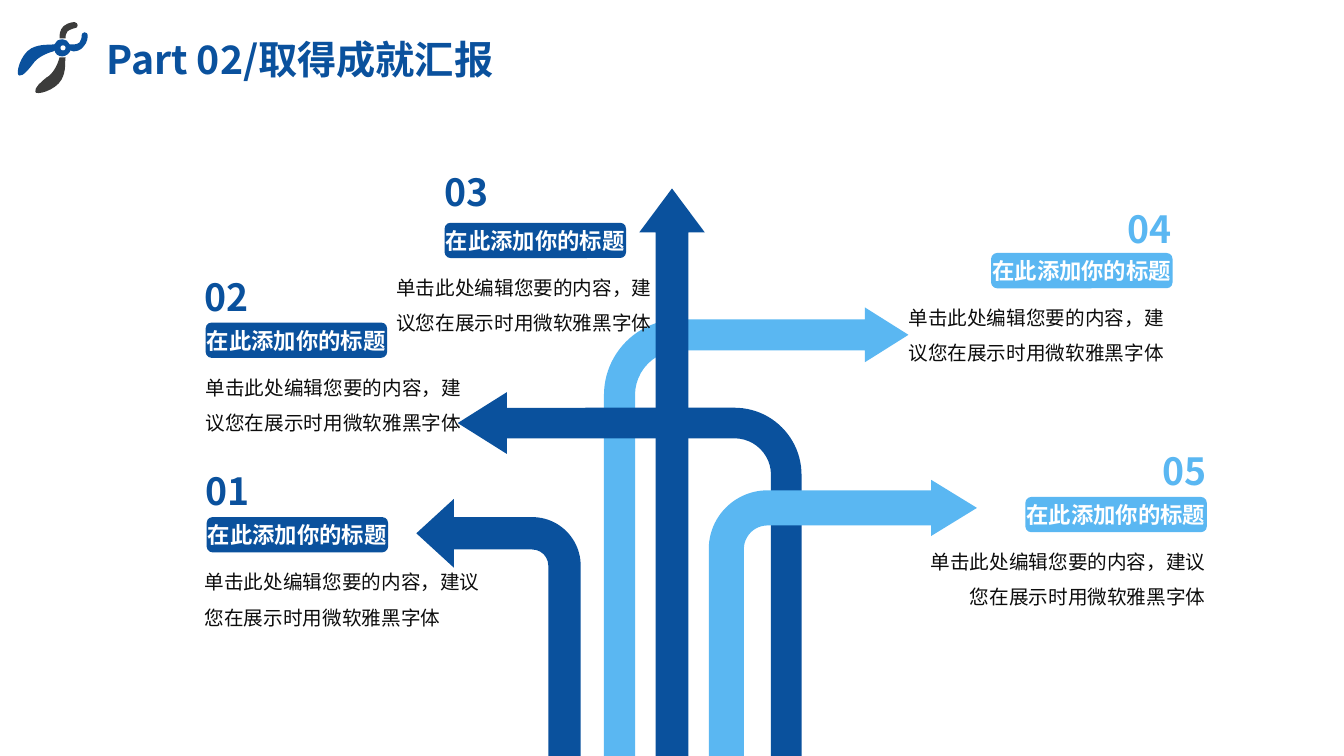
import pptx
import pptx.util
import pptx.dml.color
import pptx.enum.shapes
import pptx.enum.text
import pptx.oxml.ns
import lxml.etree

Inches = pptx.util.Inches
Shape = pptx.enum.shapes.MSO_SHAPE
Align = pptx.enum.text.PP_ALIGN
Anchor = pptx.enum.text.MSO_ANCHOR
qn = pptx.oxml.ns.qn

FONT = "Noto Sans CJK SC"
NAVY, SKY, WHITE, INK, GRAPHITE = "0A519D", "5AB7F2", "FFFFFF", "0D0D0D", "3C3C3B"

TITLE = "Part 02/取得成就汇报"
HEADING = "在此添加你的标题"
BODY = "单击此处编辑您要的内容，建议您在展示时用微软雅黑字体"

# Arrows, back to front: shape, left, top, width, adjustments, flipped, colour
ARROWS = [
    (Shape.BENT_ARROW, 5.99, 3.05, 3.02, (0.102, 0.09, 0.143, 0.249), False, SKY),
    (Shape.BENT_ARROW, 4.54, 3.89, 3.41, (0.089, 0.09, 0.143, 0.195), True, NAVY),
    (Shape.BENT_ARROW, 4.13, 4.95, 1.63, (0.197, 0.209, 0.228, 0.295), True, NAVY),
    (Shape.BENT_ARROW, 7.03, 4.76, 2.66, (0.131, 0.105, 0.171, 0.219), False, SKY),
    (Shape.UP_ARROW, 6.34, 1.87, 0.65, (0.5, 0.671), False, NAVY),
]

# Entries: number, number (left, top), bar (left, top), body (left, width), alignment, colour
ENTRIES = [
    ("01", (2.03, 4.64), (2.05, 5.13), (2.03, 2.89), Align.LEFT, NAVY),
    ("02", (2.02, 2.71), (2.04, 3.20), (2.04, 2.71), Align.LEFT, NAVY),
    ("05", (11.52, 4.44), (10.17, 4.93), (9.23, 2.73), Align.RIGHT, SKY),
    ("04", (11.17, 2.04), (9.83, 2.51), (9.01, 2.61), Align.LEFT, SKY),
    ("03", (4.40, 1.67), (4.41, 2.21), (3.93, 2.61), Align.LEFT, NAVY),
]
BAR_WIDTH, BAR_HEIGHT, BODY_DROP = 1.8, 0.35, 0.41

# Pliers icon: colour, start point, then cubic curves (two controls and an end)
BLUE_HANDLE = (NAVY, (0.84, 0.32), [
    (0.82, 0.32, 0.81, 0.34, 0.81, 0.35), (0.81, 0.36, 0.81, 0.40, 0.79, 0.42),
    (0.76, 0.45, 0.71, 0.44, 0.69, 0.44), (0.68, 0.41, 0.65, 0.39, 0.62, 0.39),
    (0.58, 0.39, 0.55, 0.41, 0.54, 0.44), (0.54, 0.44, 0.54, 0.44, 0.54, 0.44),
    (0.50, 0.45, 0.41, 0.43, 0.31, 0.48), (0.20, 0.54, 0.15, 0.74, 0.19, 0.75),
    (0.23, 0.76, 0.29, 0.68, 0.33, 0.63), (0.36, 0.58, 0.45, 0.53, 0.53, 0.51),
    (0.53, 0.51, 0.54, 0.51, 0.54, 0.50), (0.55, 0.54, 0.58, 0.56, 0.62, 0.56),
    (0.65, 0.56, 0.69, 0.53, 0.70, 0.50), (0.70, 0.50, 0.72, 0.51, 0.73, 0.51),
    (0.76, 0.51, 0.80, 0.50, 0.83, 0.46), (0.87, 0.42, 0.87, 0.36, 0.87, 0.35),
    (0.87, 0.34, 0.86, 0.32, 0.84, 0.32)])
GREY_TIP = (GRAPHITE, (0.62, 0.38), [
    (0.63, 0.38, 0.64, 0.38, 0.65, 0.38), (0.65, 0.36, 0.65, 0.33, 0.67, 0.31),
    (0.70, 0.29, 0.74, 0.28, 0.74, 0.28), (0.74, 0.28, 0.74, 0.28, 0.74, 0.28),
    (0.76, 0.28, 0.77, 0.27, 0.77, 0.25), (0.77, 0.24, 0.76, 0.22, 0.74, 0.22),
    (0.74, 0.22, 0.74, 0.22, 0.74, 0.22), (0.73, 0.22, 0.68, 0.22, 0.63, 0.26),
    (0.59, 0.30, 0.59, 0.35, 0.59, 0.38), (0.60, 0.38, 0.61, 0.38, 0.62, 0.38)])
GREY_HANDLE = (GRAPHITE, (0.65, 0.57), [
    (0.64, 0.57, 0.63, 0.57, 0.62, 0.57), (0.61, 0.57, 0.60, 0.57, 0.59, 0.57),
    (0.59, 0.57, 0.59, 0.57, 0.59, 0.57), (0.57, 0.65, 0.52, 0.74, 0.46, 0.77),
    (0.41, 0.81, 0.34, 0.87, 0.35, 0.91), (0.35, 0.95, 0.55, 0.90, 0.61, 0.79),
    (0.66, 0.70, 0.64, 0.61, 0.65, 0.57)])
RIVET = (0.6, 0.45, 0.05, 0.05)


def color(value):
    return pptx.dml.color.RGBColor.from_string(value)


def paint(shape, fill):
    shape.shadow.inherit = False
    shape.fill.solid()
    shape.fill.fore_color.rgb = color(fill)
    shape.line.fill.background()


def add_shape(parent, kind, left, top, width, height, fill):
    shape = parent.shapes.add_shape(kind, *map(Inches, (left, top, width, height)))
    paint(shape, fill)
    return shape


def write(box, text, size, ink, align, anchor, bold=True, wrap=False, inset=0, spacing=None):
    frame = box.text_frame
    frame.text = text
    frame.word_wrap = wrap
    frame.auto_size = pptx.enum.text.MSO_AUTO_SIZE.NONE
    frame.vertical_anchor = anchor
    if inset is not None:
        frame.margin_left = frame.margin_right = Inches(inset)
        frame.margin_top = frame.margin_bottom = Inches(inset)
    para = frame.paragraphs[0]
    para.alignment = align
    para.line_spacing = spacing
    span = para.runs[0]
    span.font.name = FONT
    span.font.size = pptx.util.Pt(size)
    span.font.bold = bold
    span.font.color.rgb = color(ink)
    east_asian = lxml.etree.SubElement(span.font._element, qn("a:ea"))
    east_asian.set("typeface", FONT)


def add_text(page, left, top, width, height, *args, **options):
    box = page.shapes.add_textbox(*map(Inches, (left, top, width, height)))
    write(box, *args, **options)


def add_curved(parent, fill, start, curves):
    points = [tuple(map(Inches, curve[i:i + 2])) for curve in curves for i in (0, 2, 4)]
    outline = parent.shapes.build_freeform(*map(Inches, start))
    outline.add_line_segments(points, close=True)
    shape = outline.convert_to_shape()
    paint(shape, fill)
    # Join every three straight segments into one cubic curve
    segments = list(shape.element.iter(qn("a:lnTo")))
    for first, second, third in zip(segments[::3], segments[1::3], segments[2::3]):
        curve = lxml.etree.Element(qn("a:cubicBezTo"))
        first.addprevious(curve)
        for segment in (first, second, third):
            curve.append(segment[0])
            segment.getparent().remove(segment)


def main():
    deck = pptx.Presentation()
    deck.slide_width, deck.slide_height = Inches(13.33), Inches(7.5)
    page = deck.slides.add_slide(deck.slide_layouts[5])

    # Title
    title = page.shapes.title
    title.left, title.top, title.width, title.height = map(Inches, (0.96, 0.3, 4.13, 0.57))
    write(title, TITLE, 28, NAVY, Align.JUSTIFY, Anchor.TOP, wrap=True, inset=None)

    # Arrows rising from the bottom edge
    for kind, left, top, width, adjustments, flipped, fill in ARROWS:
        arrow = add_shape(page, kind, left, top, width, 7.5 - top, fill)
        for index, value in enumerate(adjustments):
            arrow.adjustments[index] = value
        if flipped:
            arrow.element.spPr.get_or_add_xfrm().set("flipH", "1")

    # Numbered entries
    for number, number_at, bar_at, (body_left, body_width), align, accent in ENTRIES:
        bar = add_shape(page, Shape.ROUNDED_RECTANGLE, *bar_at, BAR_WIDTH, BAR_HEIGHT, accent)
        write(bar, HEADING, 16, WHITE, Align.CENTER, Anchor.MIDDLE)
        add_text(page, body_left, bar_at[1] + BODY_DROP, body_width, 0.71,
                 BODY, 14, INK, align, Anchor.TOP, bold=False, wrap=True, spacing=1.5)
        add_text(page, *number_at, 0.46, 0.45,
                 number, 26.7, accent, Align.CENTER, Anchor.BOTTOM)

    # Pliers icon
    pliers = page.shapes.add_group_shape()
    add_curved(pliers, *BLUE_HANDLE)
    add_shape(pliers, Shape.OVAL, *RIVET, WHITE)
    add_curved(pliers, *GREY_TIP)
    add_curved(pliers, *GREY_HANDLE)

    deck.save("out.pptx")


if __name__ == "__main__":
    main()
